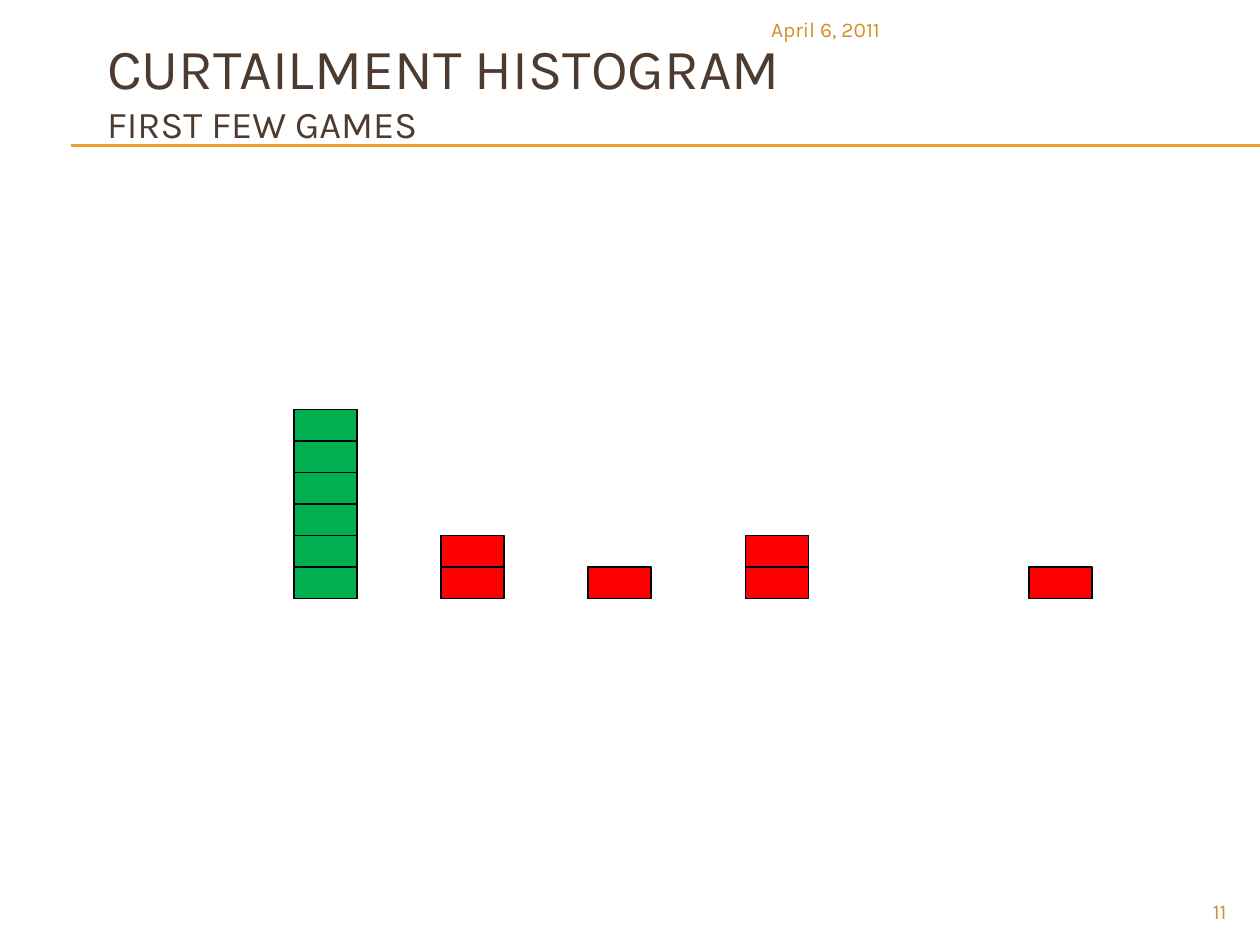
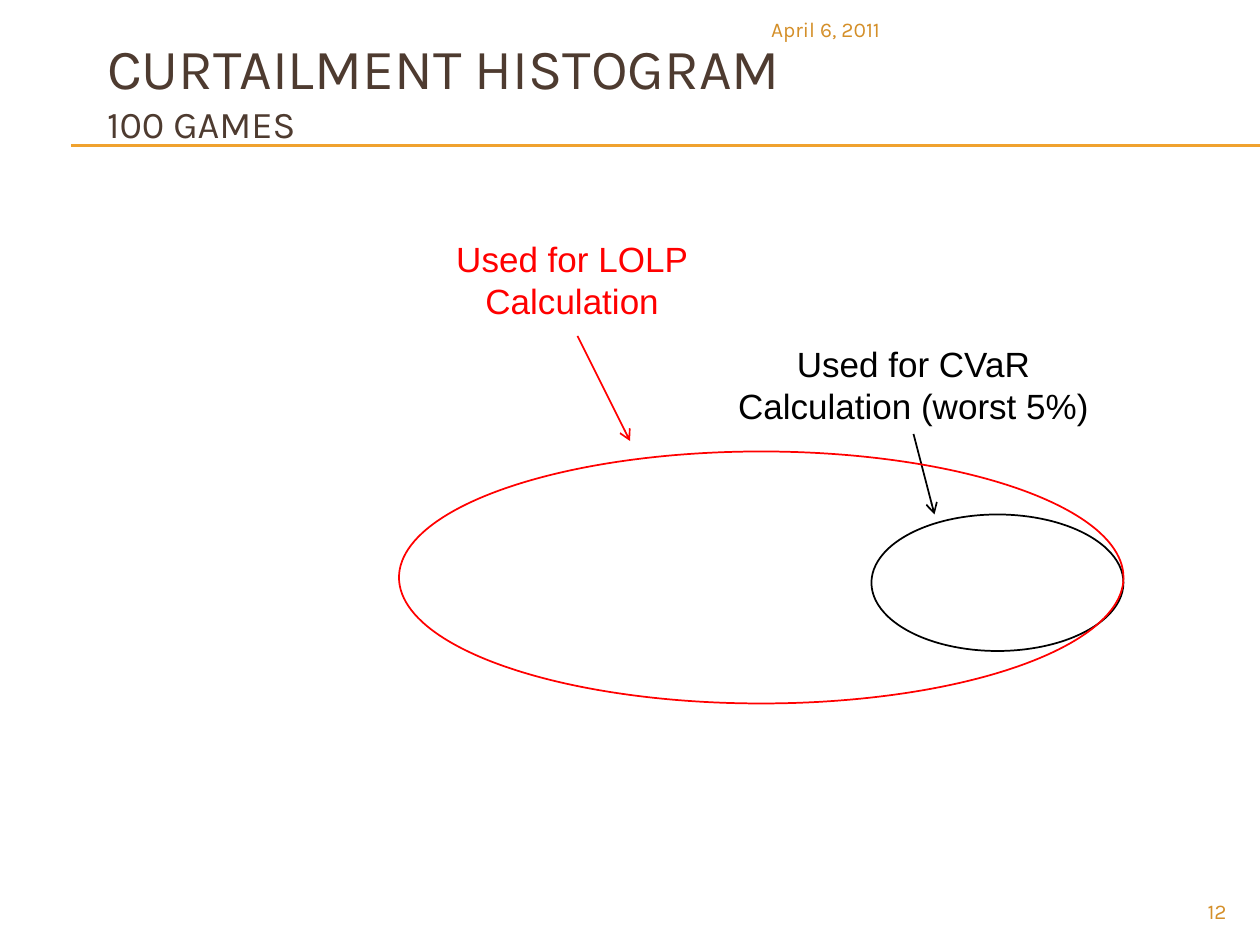
import copy

import lxml.etree
import pptx
import pptx.dml.color
import pptx.enum.shapes
import pptx.enum.text
import pptx.oxml.ns
import pptx.util

Pt = pptx.util.Pt
qn = pptx.oxml.ns.qn
ALIGN = pptx.enum.text.PP_ALIGN
SHAPES = pptx.enum.shapes.MSO_SHAPE

BROWN, GOLD, AMBER = "4E3B30", "F0A22E", "D48F29"
BLACK, RED, GREEN = "000000", "FF0000", "00B050"
TITLE_ONLY = 5


def color(hex_code):
    return pptx.dml.color.RGBColor.from_string(hex_code)


class Slides:
    """Holds the deck, its style and the current page."""

    def __init__(self):
        self.deck = pptx.Presentation()
        self.deck.slide_width, self.deck.slide_height = Pt(720), Pt(540)
        self.page = None

    def format_span(self, span, size, font, hex_code):
        span.font.size = Pt(size)
        span.font.name = font
        span.font.color.rgb = color(hex_code)

    def new_page(self, title, subtitle, number):
        self.page = self.deck.slides.add_slide(self.deck.slide_layouts[TITLE_ONLY])
        # Double rule below the title
        for y in (82.8, 83.5):
            self.line(40.5, y, 720, y, GOLD, 0.75)
        self.title(title, subtitle)
        # Date and page number
        self.text("April 6, 2011", 282, 6, 228, 23, 12, "Karla", AMBER, ALIGN.RIGHT)
        self.text(str(number), 648, 510, 60, 19, 12, "Karla", AMBER, ALIGN.RIGHT)

    def title(self, title, subtitle):
        box = self.page.shapes.title
        box.left, box.top, box.width, box.height = Pt(54), Pt(12), Pt(612), Pt(78)
        frame = box.text_frame
        frame.text = f"{title}\v{subtitle}"
        frame.auto_size = pptx.enum.text.MSO_AUTO_SIZE.NONE
        frame.vertical_anchor = pptx.enum.text.MSO_ANCHOR.MIDDLE
        para = frame.paragraphs[0]
        para.alignment = ALIGN.LEFT
        for span, size in zip(para.runs, (32.4, 21.6)):
            self.format_span(span, size, "Karla", BROWN)
        # The line break takes the size of the first line
        first_style = para.runs[0].font._element
        para._p.find(qn("a:br")).append(copy.deepcopy(first_style))

    def text(self, words, left, top, width, height, size, font, hex_code, alignment):
        box = self.page.shapes.add_textbox(Pt(left), Pt(top), Pt(width), Pt(height))
        frame = box.text_frame
        frame.word_wrap = True
        frame.text = words
        for para in frame.paragraphs:
            para.alignment = alignment
            for span in para.runs:
                self.format_span(span, size, font, hex_code)

    def shape(self, kind, left, top, width, height, outline, fill=None):
        shape = self.page.shapes.add_shape(kind, Pt(left), Pt(top), Pt(width), Pt(height))
        shape.shadow.inherit = False
        shape.line.color.rgb = color(outline)
        shape.line.width = Pt(1)
        if fill:
            shape.fill.solid()
            shape.fill.fore_color.rgb = color(fill)
        else:
            shape.fill.background()

    def line(self, x1, y1, x2, y2, hex_code, width, arrow=False):
        line = self.page.shapes.add_connector(
            pptx.enum.shapes.MSO_CONNECTOR.STRAIGHT, Pt(x1), Pt(y1), Pt(x2), Pt(y2))
        line.line.color.rgb = color(hex_code)
        line.line.width = Pt(width)
        properties = line._element.spPr
        if arrow:
            lxml.etree.SubElement(properties.find(qn("a:ln")), qn("a:tailEnd"), type="arrow")
        lxml.etree.SubElement(properties, qn("a:effectLst"))

    def stack(self, left, count, fill, base=342, width=36, height=18):
        for level in range(1, count + 1):
            self.shape(SHAPES.RECTANGLE, left, base - level * height, width, height, BLACK, fill)


def main():
    slides = Slides()

    # First few games: one brick per game
    slides.new_page("CURTAILMENT HISTOGRAM", "FIRST FEW GAMES", 11)
    for left, games, fill in ((168, 6, GREEN), (252, 2, RED), (336, 1, RED),
                              (426, 2, RED), (588, 1, RED)):
        slides.stack(left, games, fill)

    # 100 games: the worst 5% lies inside the curtailed games
    slides.new_page("CURTAILMENT HISTOGRAM", "100 GAMES", 12)
    slides.shape(SHAPES.OVAL, 498, 294, 144, 78, BLACK)
    slides.text("Used for CVaR Calculation (worst 5%)", 408, 192, 228, 55,
                20, "Arial", BLACK, ALIGN.CENTER)
    slides.line(522, 248, 534, 294, BLACK, 1, arrow=True)
    slides.shape(SHAPES.OVAL, 228, 258, 414, 144, RED)
    slides.line(330, 192, 360, 252, RED, 1, arrow=True)
    slides.text("Used for LOLP\nCalculation", 222, 132, 210, 55,
                20, "Arial", RED, ALIGN.CENTER)

    slides.deck.save("out.pptx")


if __name__ == "__main__":
    main()
